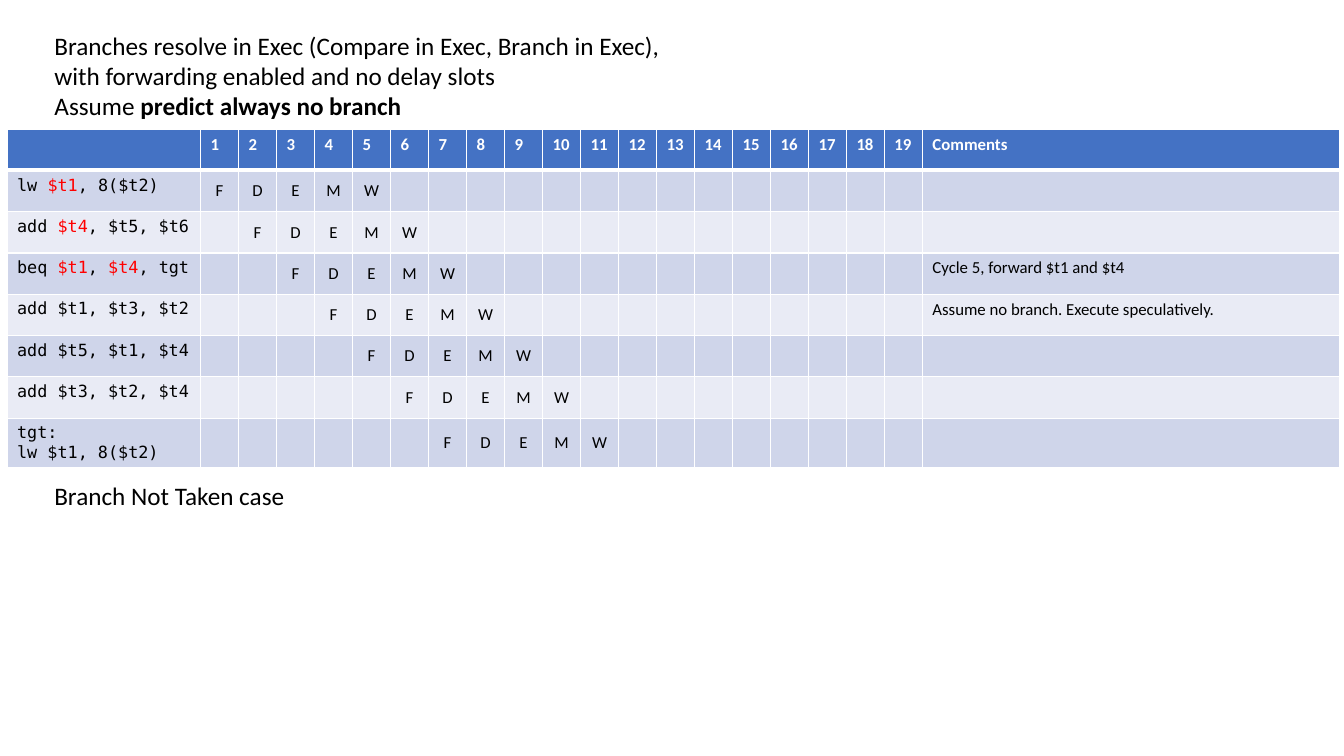
import pptx
import pptx.dml.color
import pptx.enum.text
import pptx.oxml
import pptx.oxml.ns
import pptx.util

Inches = pptx.util.Inches
ALIGN = pptx.enum.text.PP_ALIGN
ANCHOR = pptx.enum.text.MSO_ANCHOR
HUES = {"head": "4472C4", "odd": "CFD5EA", "even": "E9EBF5",
        "white": "FFFFFF", "black": "000000", "red": "FF0000"}


def write(frame, text, size=12, face="Calibri", hue="black", bold=False,
          mark="red", align=ALIGN.LEFT):
    """Fill a frame; pieces between asterisks turn red or bold."""
    for n, line in enumerate(text.split("\n")):
        para = frame.add_paragraph() if n else frame.paragraphs[0]
        para.alignment = align
        for k, piece in enumerate(line.split("*")):
            run = para.add_run()
            run.text = piece
            font = run.font
            font.size, font.name = pptx.util.Pt(size), face
            marked = k % 2 == 1
            font.bold = bold or (marked and mark == "bold")
            tint = "red" if marked and mark == "red" else hue
            font.color.rgb = pptx.dml.color.RGBColor.from_string(HUES[tint])


def dress(cell, hue, top, base):
    """Give a cell white borders, in points, and a fill."""
    props = cell._tc.get_or_add_tcPr()
    for side, width in (("L", 1), ("R", 1), ("T", top), ("B", base)):
        props.append(pptx.oxml.parse_xml(
            f'<a:ln{side} {pptx.oxml.ns.nsdecls("a")} w="{width * 12700}">'
            f'<a:solidFill><a:srgbClr val="{HUES["white"]}"/></a:solidFill>'
            f'</a:ln{side}>'))
    cell.fill.solid()
    cell.fill.fore_color.rgb = pptx.dml.color.RGBColor.from_string(HUES[hue])


deck = pptx.Presentation()
deck.slide_width, deck.slide_height = Inches(13.33), Inches(7.5)
slide = deck.slides.add_slide(deck.slide_layouts[5])

# Title
title = slide.shapes.title
title.left, title.top = Inches(0.44), Inches(0.25)
title.width, title.height = Inches(6.33), Inches(1.01)
frame = title.text_frame
frame.word_wrap = True
frame.auto_size = pptx.enum.text.MSO_AUTO_SIZE.NONE
frame.vertical_anchor = ANCHOR.TOP
write(frame, "Branches resolve in Exec (Compare in Exec, Branch in Exec),\n"
      "with forwarding enabled and no delay slots\n"
      "Assume *predict always no branch*", size=18, mark="bold")

# Pipeline table: each instruction starts one cycle after the last
STEPS = [
    ("lw *$t1*, 8($t2)", ""),
    ("add *$t4*, $t5, $t6", ""),
    ("beq *$t1*, *$t4*, tgt", "Cycle 5, forward $t1 and $t4"),
    ("add $t1, $t3, $t2", "Assume no branch. Execute speculatively."),
    ("add $t5, $t1, $t4", ""),
    ("add $t3, $t2, $t4", ""),
    ("tgt:\nlw $t1, 8($t2)", ""),
]
CYCLES = 19
WIDE, FIRST, LAST, HIGH = 13.22, 1.92, 4.14, 0.41
rows, cols = len(STEPS) + 1, CYCLES + 2
grid = slide.shapes.add_table(rows, cols, Inches(0.07), Inches(1.28),
                              Inches(WIDE), Inches(HIGH * rows)).table
grid.horz_banding = False
for col in grid.columns:
    col.width = Inches((WIDE - FIRST - LAST) / CYCLES)
grid.columns[0].width = Inches(FIRST)
grid.columns[cols - 1].width = Inches(LAST)
for row in grid.rows:
    row.height = Inches(HIGH)

# Header row
heads = [""] + [str(n + 1) for n in range(CYCLES)] + ["Comments"]
for c, head in enumerate(heads):
    cell = grid.cell(0, c)
    dress(cell, "head", 1, 3)
    if head:
        write(cell.text_frame, head, hue="white", bold=True)

# Instruction rows
for r, (code, note) in enumerate(STEPS, 1):
    for c in range(cols):
        dress(grid.cell(r, c), "odd" if r % 2 else "even", 3 if r == 1 else 1, 1)
    write(grid.cell(r, 0).text_frame, code, face="DejaVu Sans Mono")
    for c, stage in enumerate("FDEMW", r):
        cell = grid.cell(r, c)
        cell.vertical_anchor = ANCHOR.MIDDLE
        write(cell.text_frame, stage, align=ALIGN.CENTER)
    if note:
        write(grid.cell(r, cols - 1).text_frame, note)

# Caption
box = slide.shapes.add_textbox(Inches(0.44), Inches(4.72), Inches(2.51), Inches(0.4))
box.text_frame.word_wrap = True
write(box.text_frame, "Branch Not Taken case", size=18)

deck.save("out.pptx")
